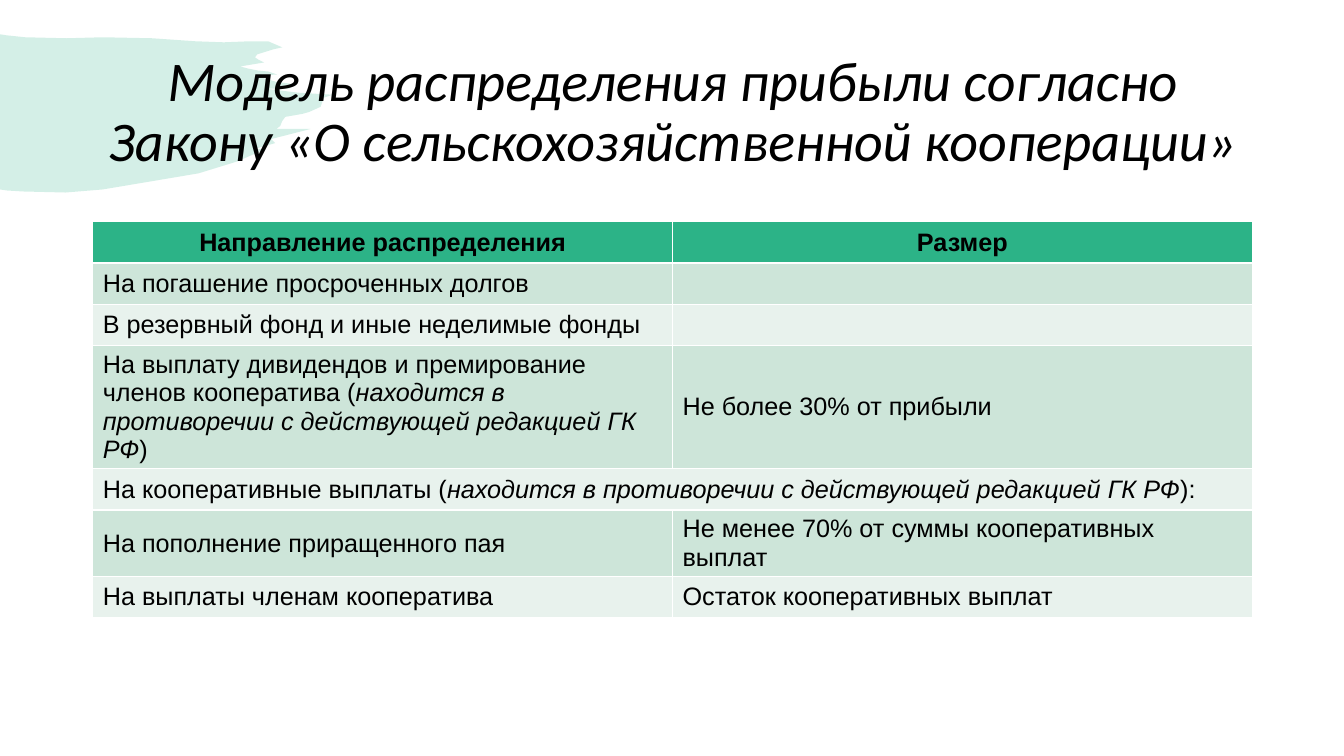
from pptx import Presentation
from pptx.dml.color import RGBColor as RGB
from pptx.enum.text import MSO_ANCHOR as ANCHOR, MSO_AUTO_SIZE as AUTO, PP_ALIGN as ALIGN
from pptx.oxml.ns import qn
from pptx.util import Inches, Pt
from lxml.etree import SubElement

GREEN = RGB(0x2C, 0xB3, 0x87)
DARK = RGB(0xCD, 0xE5, 0xD9)
PALE = RGB(0xE8, 0xF2, 0xED)
BLACK = RGB(0, 0, 0)

# Brush outline, in hundredths of an inch
BRUSH = [
    (0, 34), (6, 35), (25, 37), (66, 38), (102, 37), (151, 38), (194, 41), (222, 42),
    (248, 41), (266, 41), (280, 47), (271, 49), (255, 54), (253, 57), (256, 59), (262, 62),
    (238, 66), (246, 68), (256, 70), (266, 71), (275, 74), (251, 75), (263, 78),
    (273, 81), (280, 82), (288, 83), (290, 85), (287, 88), (284, 88), (263, 88),
    (296, 92), (330, 94), (321, 97), (318, 106), (307, 111), (300, 113), (283, 116),
    (280, 120), (278, 125), (274, 128), (308, 128), (269, 138), (273, 142), (252, 148),
    (263, 148), (236, 160), (197, 172), (102, 188), (65, 191), (23, 190), (7, 189), (0, 188),
]

# Text between bars is italic
ROWS = [
    ("Направление распределения", "Размер"),
    ("На погашение просроченных долгов", ""),
    ("В резервный фонд и иные неделимые фонды", ""),
    ("На выплату дивидендов и премирование членов кооператива "
     "(|находится в противоречии с действующей редакцией ГК РФ|)",
     "Не более 30% от прибыли"),
    ("На кооперативные выплаты "
     "(|находится в противоречии с действующей редакцией ГК РФ|):", ""),
    ("На пополнение приращенного пая", "Не менее 70% от суммы кооперативных выплат"),
    ("На выплаты членам кооператива", "Остаток кооперативных выплат"),
]
SPAN = 4  # row that fills both columns

prs = Presentation()
prs.slide_width, prs.slide_height = Inches(13.33), Inches(7.5)
slide = prs.slides.add_slide(prs.slide_layouts[5])
left, width = Inches(0.92), Inches(11.5)

# Brush stroke behind the title
pen = slide.shapes.build_freeform(*BRUSH[0], scale=Inches(0.01))
pen.add_line_segments(BRUSH[1:], close=True)
brush = pen.convert_to_shape()
brush.shadow.inherit = False
brush.line.fill.background()
brush.fill.solid()
brush.fill.fore_color.rgb = GREEN
tint = brush.element.spPr.find(qn("a:solidFill"))[0]
SubElement(tint, qn("a:alpha"), val="20000")
slide.shapes.element.insert(2, brush.element)

# Title
title = slide.shapes.title
title.left, title.top, title.width, title.height = left, Inches(0.4), width, Inches(1.45)
frame = title.text_frame
frame.text = "Модель распределения прибыли согласно Закону «О сельскохозяйственной кооперации»"
frame.word_wrap, frame.auto_size = True, AUTO.NONE
frame.vertical_anchor = ANCHOR.MIDDLE
para = frame.paragraphs[0]
para.alignment, para.line_spacing = ALIGN.CENTER, 0.9
para.font.name, para.font.size = "Calibri", Pt(40)
para.font.italic, para.font.color.rgb = True, BLACK

# Table
high = Inches(0.41)
table = slide.shapes.add_table(len(ROWS), 2, left, Inches(2.2), width, high * len(ROWS)).table
table.cell(SPAN, 0).merge(table.cell(SPAN, 1))
for r, row in enumerate(ROWS):
    table.rows[r].height = high
    for c, text in enumerate(row):
        cell = table.cell(r, c)
        cell.vertical_anchor = ANCHOR.MIDDLE
        cell.fill.solid()
        cell.fill.fore_color.rgb = GREEN if r == 0 else DARK if r % 2 else PALE
        para = cell.text_frame.paragraphs[0]
        para.alignment = ALIGN.LEFT if r else ALIGN.CENTER
        para.font.name, para.font.size = "Arial", Pt(18)
        para.font.bold, para.font.color.rgb = r == 0, BLACK
        if text:
            for i, part in enumerate(text.split("|")):
                run = para.add_run()
                run.text = part
                if i % 2:
                    run.font.italic = True

prs.save("out.pptx")
